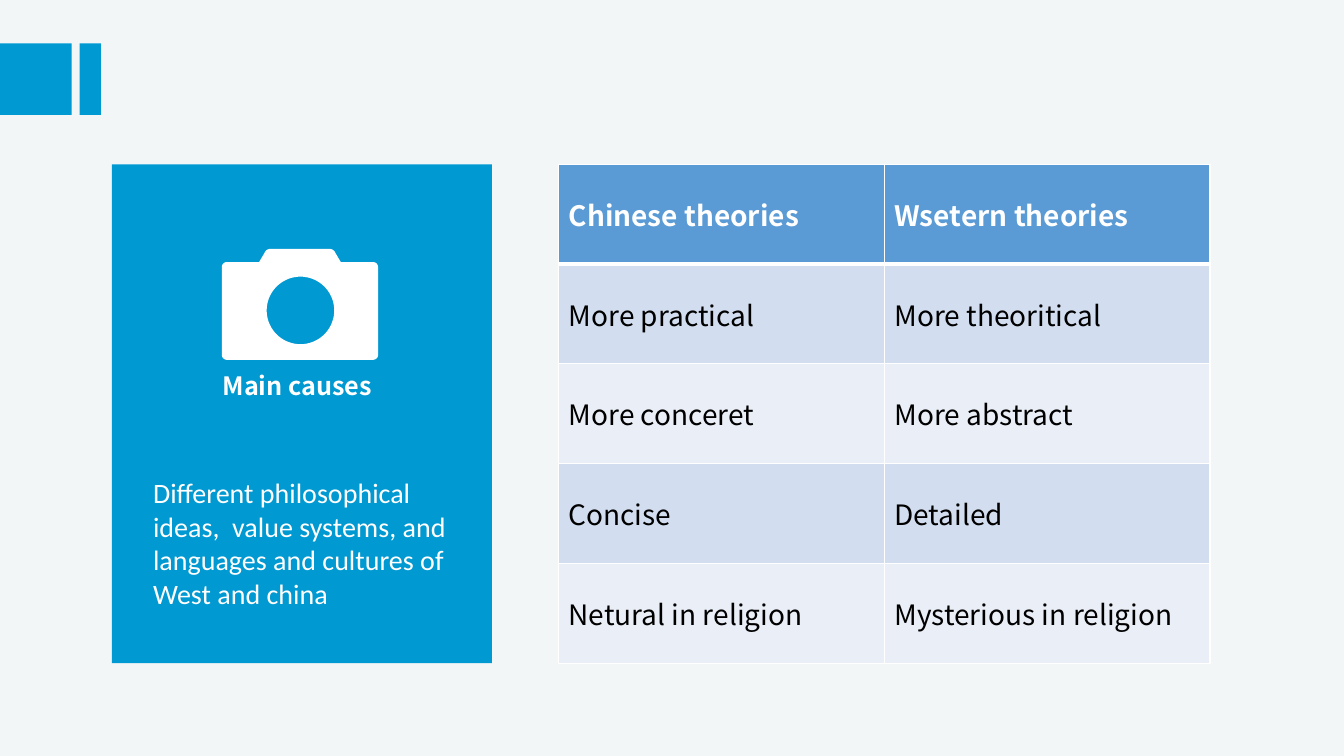
import dataclasses
import math

import lxml.etree
import pptx
import pptx.dml.color
import pptx.enum.shapes
import pptx.enum.text
import pptx.oxml.ns
import pptx.util

Inches = pptx.util.Inches


@dataclasses.dataclass(frozen=True)
class Theme:
    """Colours, fonts and type sizes of the slide."""

    background: str = "F3F6F7"
    accent: str = "0099D1"
    white: str = "FFFFFF"
    black: str = "000000"
    header: str = "5B9BD5"
    bands: tuple = ("D2DEEF", "EAEFF7")
    heading_font: str = "Noto Sans CJK SC"
    body_font: str = "Calibri"
    label_size: int = 18
    body_size: int = 20
    thin_border: int = 1
    thick_border: int = 3


def paint(fill, color):
    """Give a fill one solid colour."""
    fill.solid()
    fill.fore_color.rgb = pptx.dml.color.RGBColor.from_string(color)


def write(frame, text, *, font, size, color, bold=False):
    """Write each line of text as a formatted paragraph."""
    for index, line in enumerate(text.split("\n")):
        para = frame.paragraphs[0] if index == 0 else frame.add_paragraph()
        span = para.add_run()
        span.text = line
        span.font.name = font
        span.font.size = pptx.util.Pt(size)
        span.font.bold = bold
        span.font.color.rgb = pptx.dml.color.RGBColor.from_string(color)


def arc(x, y, radius, start, end, steps=8):
    """List points along an arc, with angles in degrees."""
    angles = [math.radians(start + (end - start) * step / steps) for step in range(steps + 1)]
    return [(x + radius * math.cos(angle), y + radius * math.sin(angle)) for angle in angles]


def border(cell, side, color, width):
    """Add a solid border to one side of a cell."""
    properties = cell._tc.get_or_add_tcPr()
    line = lxml.etree.SubElement(properties, pptx.oxml.ns.qn(f"a:ln{side}"), w=str(pptx.util.Pt(width)))
    solid = lxml.etree.SubElement(line, pptx.oxml.ns.qn("a:solidFill"))
    lxml.etree.SubElement(solid, pptx.oxml.ns.qn("a:srgbClr"), val=color)


class Painter:
    """Draws elements on the current slide in one style."""

    def __init__(self, slide, theme):
        """Keep the slide and theme, and colour the background."""
        self.slide = slide
        self.theme = theme
        paint(slide.background.fill, theme.background)

    def finish(self, shape, color):
        """Fill a shape and remove its line and shadow."""
        paint(shape.fill, color)
        shape.line.fill.background()
        shape.shadow.inherit = False

    def panel(self, left, top, width, height):
        """Draw an accent rectangle."""
        kind = pptx.enum.shapes.MSO_SHAPE.RECTANGLE
        shape = self.slide.shapes.add_shape(kind, Inches(left), Inches(top), Inches(width), Inches(height))
        self.finish(shape, self.theme.accent)

    def outline(self, contours, color):
        """Draw closed contours as one filled shape."""
        builder = None
        for contour in contours:
            points = [(Inches(x), Inches(y)) for x, y in contour]
            if builder is None:
                builder = self.slide.shapes.build_freeform(*points[0])
            else:
                builder.move_to(*points[0])
            builder.add_line_segments(points[1:], close=True)
        self.finish(builder.convert_to_shape(), color)

    def text(self, text, left, top, width, height, **style):
        """Add a wrapping text box."""
        box = self.slide.shapes.add_textbox(Inches(left), Inches(top), Inches(width), Inches(height))
        box.text_frame.word_wrap = True
        write(box.text_frame, text, color=self.theme.white, **style)

    def table(self, rows, left, top, width, height):
        """Add a table with a header row and banded body rows."""
        theme = self.theme
        frame = self.slide.shapes.add_table(
            len(rows), len(rows[0]), Inches(left), Inches(top), Inches(width), Inches(height)
        )
        for row, values in enumerate(rows):
            is_header = row == 0
            for column, value in enumerate(values):
                cell = frame.table.cell(row, column)
                cell.vertical_anchor = pptx.enum.text.MSO_ANCHOR.MIDDLE
                for side in "LRTB":
                    under_header = (row, side) in ((0, "B"), (1, "T"))
                    border(cell, side, theme.white, theme.thick_border if under_header else theme.thin_border)
                paint(cell.fill, theme.header if is_header else theme.bands[(row - 1) % 2])
                write(
                    cell.text_frame,
                    value,
                    font=theme.heading_font,
                    size=theme.body_size,
                    color=theme.white if is_header else theme.black,
                    bold=is_header,
                )


def main():
    """Build the slide and save it."""
    theme = Theme()
    deck = pptx.Presentation()
    deck.slide_width, deck.slide_height = Inches(13.33), Inches(7.5)
    painter = Painter(deck.slides.add_slide(deck.slide_layouts[6]), theme)

    painter.panel(0, 0.43, 0.71, 0.71)
    painter.panel(0.79, 0.43, 0.21, 0.71)
    painter.panel(1.11, 1.63, 3.77, 4.95)

    camera_body = [
        *arc(2.25, 2.65, 0.05, 180, 270),
        (2.57, 2.6),
        *arc(2.68, 2.53, 0.06, 200, 270),
        *arc(3.27, 2.53, 0.06, 270, 340),
        (3.38, 2.6),
        *arc(3.7, 2.65, 0.05, 270, 360),
        *arc(3.7, 3.52, 0.05, 0, 90),
        *arc(2.25, 3.52, 0.05, 90, 180),
    ]
    lens = arc(2.98, 3.08, 0.335, 360, 0, steps=72)
    painter.outline([camera_body, lens], theme.white)

    painter.text(
        "Main causes", 2.11, 3.62, 1.77, 0.4, font=theme.heading_font, size=theme.label_size, bold=True
    )
    painter.text(
        "Different philosophical ideas,  value systems, and\nlanguages and cultures of West and china",
        1.42, 4.67, 3.13, 1.45, font=theme.body_font, size=theme.body_size,
    )
    painter.table(
        [
            ("Chinese theories", "Wsetern theories"),
            ("More practical", "More theoritical"),
            ("More conceret", "More abstract"),
            ("Concise", "Detailed"),
            ("Netural in religion", "Mysterious in religion"),
        ],
        5.54, 1.63, 6.46, 4.95,
    )
    deck.save("out.pptx")


if __name__ == "__main__":
    main()
